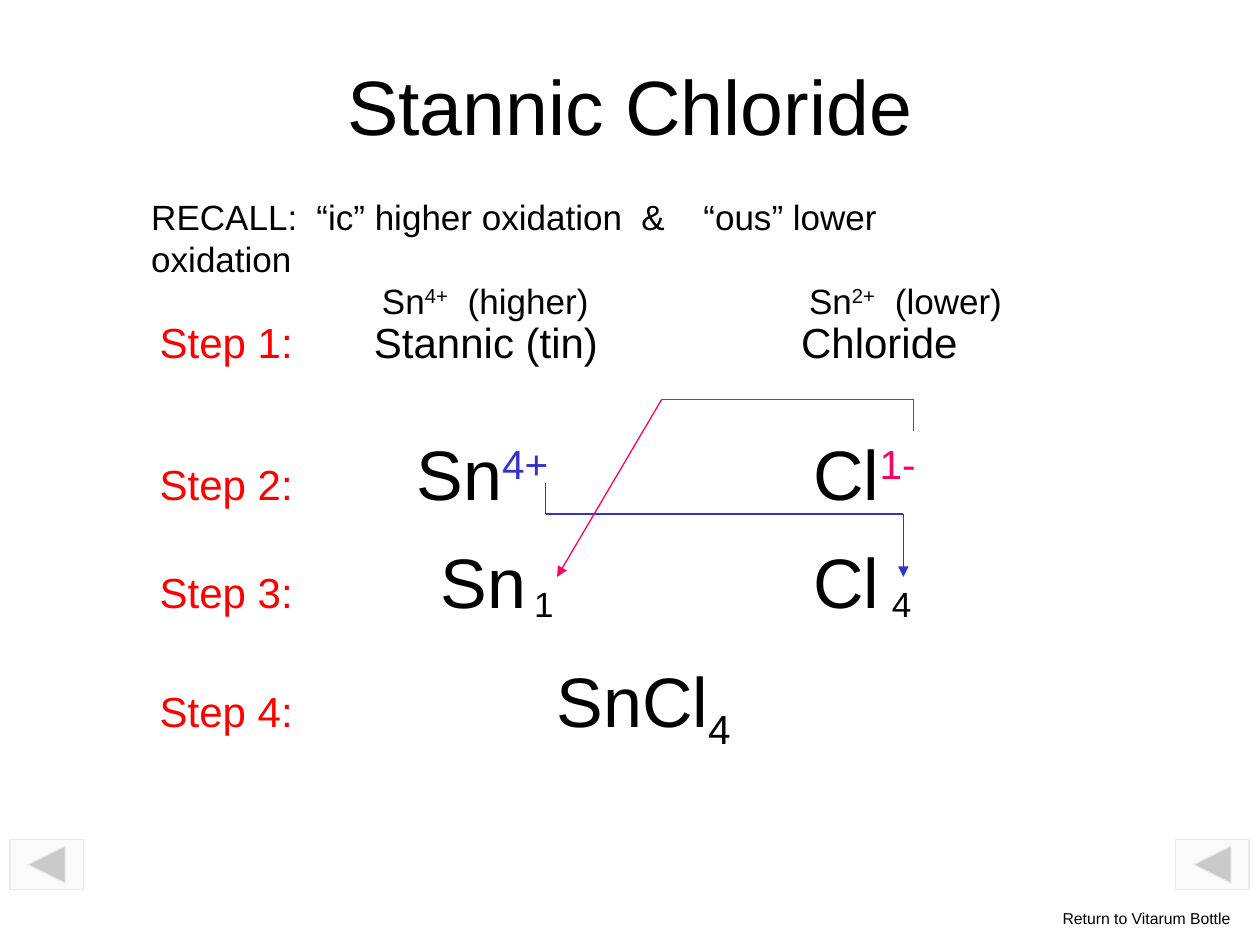
from itertools import pairwise

from lxml import etree
from pptx import Presentation
from pptx.dml.color import RGBColor
from pptx.enum.shapes import MSO_CONNECTOR, MSO_SHAPE
from pptx.enum.text import MSO_ANCHOR, PP_ALIGN
from pptx.oxml.ns import qn
from pptx.util import Cm, Pt

STRAIGHT = MSO_CONNECTOR.STRAIGHT
BACK_BUTTON = MSO_SHAPE.ACTION_BUTTON_BACK_OR_PREVIOUS
MIDDLE = MSO_ANCHOR.MIDDLE
CENTER = PP_ALIGN.CENTER

FONT = "Arial"
BLACK, RED, BLUE, PINK = "000000", "FF0000", "3333CC", "FF0066"
BUTTON_FILL, BUTTON_LINE = "F7F7F7", "EAEAEA"
RAISED, LOWERED = 30, -25


def color(value):
    return RGBColor.from_string(value)


def add_span(para, text, size, tint=BLACK, baseline=0):
    span = para.add_run()
    span.text = text
    span.font.name = FONT
    span.font.size = Pt(size)
    span.font.color.rgb = color(tint)
    if baseline:
        span._r.get_or_add_rPr().set("baseline", str(baseline * 1000))


def set_tabs(para, stops):
    tabs = etree.SubElement(para._p.get_or_add_pPr(), qn("a:tabLst"))
    for stop in stops:
        etree.SubElement(tabs, qn("a:tab"), pos=str(Cm(stop)), algn="l")


def add_text(slide, box, paragraphs, wrap=False):
    """Each paragraph is a pair: its tab stops in cm and its spans."""
    frame = slide.shapes.add_textbox(*map(Cm, box)).text_frame
    frame.word_wrap = wrap
    for index, (stops, spans) in enumerate(paragraphs):
        para = frame.add_paragraph() if index else frame.paragraphs[0]
        if stops:
            set_tabs(para, stops)
        for span in spans:
            add_span(para, *span)


def add_path(slide, points, tint):
    """Joined straight lines, with an arrowhead on the last one."""
    for start, end in pairwise(points):
        line = slide.shapes.add_connector(STRAIGHT, *map(Cm, start + end))
        line.line.color.rgb = color(tint)
        line.line.width = Pt(0.75)
        properties = line._element.spPr
        etree.SubElement(properties, qn("a:effectLst"))
    etree.SubElement(properties.find(qn("a:ln")), qn("a:tailEnd"), type="triangle")


def add_title(slide, box, text):
    title = slide.shapes.title
    title.left, title.top, title.width, title.height = map(Cm, box)
    title.text_frame.vertical_anchor = MIDDLE
    para = title.text_frame.paragraphs[0]
    para.alignment = CENTER
    add_span(para, text, 44)


def add_recall(slide, box):
    rule = [("RECALL:\t“ic” higher oxidation\t&\t“ous” lower oxidation", 20)]
    ions = [
        ("\tSn", 20), ("4+", 20, BLACK, RAISED), ("\t(higher)", 20),
        ("\tSn", 20), ("2+", 20, BLACK, RAISED), ("\t(lower)", 20),
    ]
    add_text(slide, box, [
        ((3.33, 9.88, 11.13), rule),
        ((4.65, 6.38, 13.26, 14.99), ions),
    ], wrap=True)


def add_steps(slide, box):
    left, top, width, _ = box

    # Steps: offset from the top, tab stops, spans after the label
    steps = [
        (0, (4.32, 12.93), [("\tStannic (tin)\tChloride", 24)]),
        (2.31, (5.18, 13.18), [
            ("\tSn", 40), ("4+", 40, BLUE, RAISED),
            ("\tCl", 40), ("1-", 40, PINK, RAISED)]),
        (4.49, (5.66, 13.18), [("\tSn\tCl", 40)]),
        (6.88, (8,), [("\tSnCl", 40), ("4", 40, BLACK, LOWERED)]),
    ]
    for number, (offset, stops, spans) in enumerate(steps, 1):
        height = 1.27 if number == 1 else 1.96
        label = (f"Step {number}:", 24, RED)
        add_text(slide, (left, top + offset, width, height),
                 [(stops, [label] + spans)])

    # Subscripts of step 3
    for text, offset in (("1", 7.55), ("4", 14.76)):
        add_text(slide, (left + offset, top + 5.36, 0.91, 1.09),
                 [((), [(text, 20)])])

    # Crossed charges
    paths = {
        BLUE: [(8.03, 3.48), (8.03, 4.11), (15.24, 4.11), (15.24, 5.38)],
        PINK: [(15.45, 2.44), (15.45, 1.8), (10.37, 1.8), (8.26, 5.38)],
    }
    for tint, points in paths.items():
        add_path(slide, [(left + x, top + y) for x, y in points], tint)


def add_navigation(slide, box):
    left, top, width, _ = box
    button_width, button_height = 1.48, 1
    for x in (left + width - button_width, left):
        button = slide.shapes.add_shape(
            BACK_BUTTON, Cm(x), Cm(top), Cm(button_width), Cm(button_height))
        button.shadow.inherit = False
        button.fill.solid()
        button.fill.fore_color.rgb = color(BUTTON_FILL)
        tint = button._element.spPr.find(qn("a:solidFill"))[0]
        etree.SubElement(tint, qn("a:alpha"), val="50000")
        button.line.color.rgb = color(BUTTON_LINE)
        button.line.width = Pt(0.75)
    add_text(slide, (left + width - 4.01, top + 1.27, 4.01, 0.64),
             [((), [("Return to Vitarum Bottle", 9)])])


def main():
    deck = Presentation()
    deck.slide_width, deck.slide_height = Cm(25.4), Cm(19.05)
    slide = deck.slides.add_slide(deck.slide_layouts[5])
    add_title(slide, (1.9, 1.27, 21.6, 1.7), "Stannic Chloride")
    add_recall(slide, (2.8, 3.81, 18, 1.96))
    add_steps(slide, (2.97, 6.25, 16.6, 8.84))
    add_navigation(slide, (0.2, 16.93, 24.98, 1.91))
    deck.save("out.pptx")


if __name__ == "__main__":
    main()
